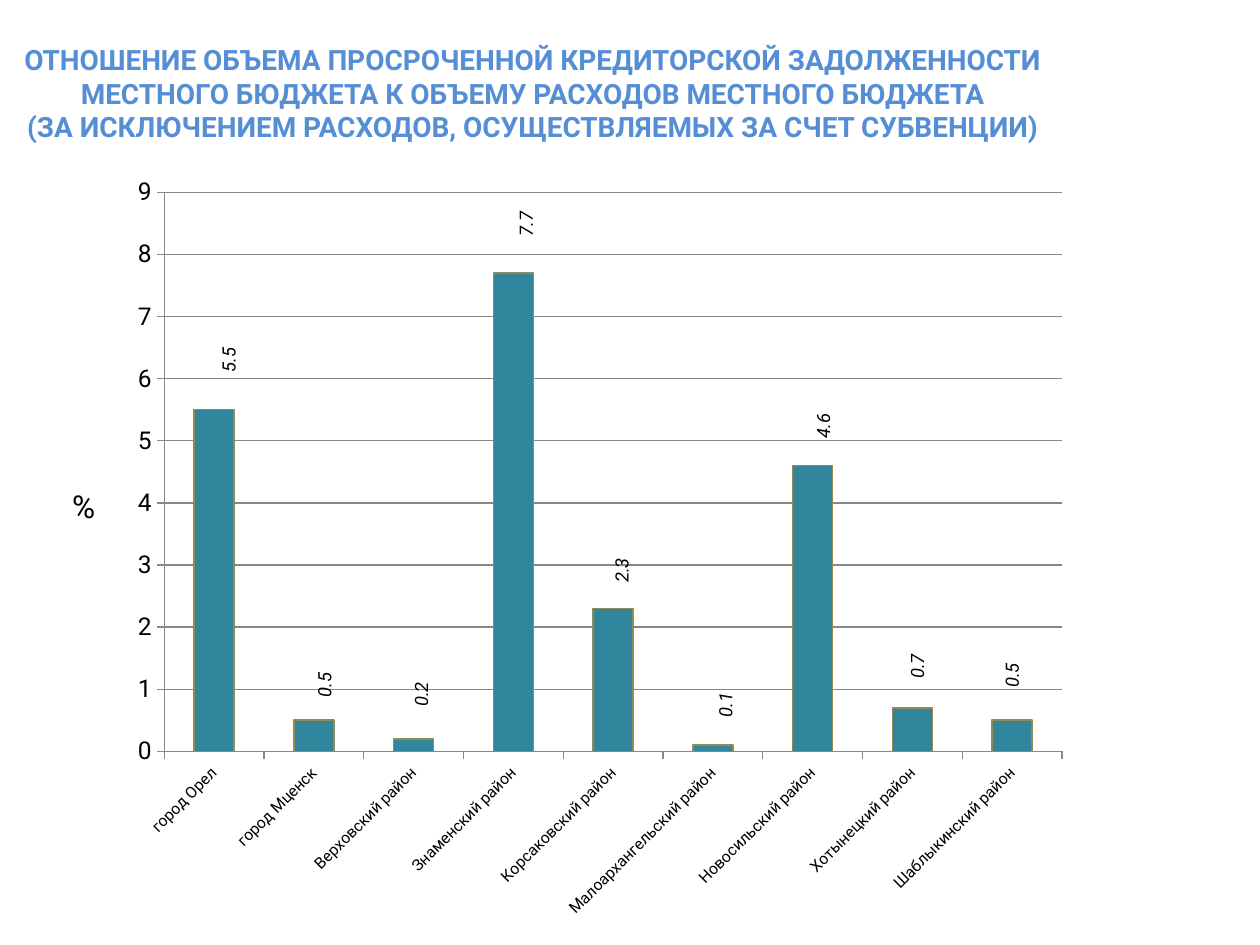
from lxml.etree import SubElement
from pptx import Presentation
from pptx.chart.data import CategoryChartData
from pptx.dml.color import RGBColor
from pptx.enum.chart import XL_CHART_TYPE, XL_LABEL_POSITION, XL_TICK_MARK
from pptx.enum.text import MSO_ANCHOR, PP_ALIGN
from pptx.oxml import parse_xml
from pptx.oxml.ns import nsdecls, qn
from pptx.util import Inches, Pt

FONT = "Roboto"
BLACK = "000000"
GRAY = "878787"
CHART_WIDTH, CHART_HEIGHT = 7.91, 5.91
TITLE = (
    "ОТНОШЕНИЕ ОБЪЕМА ПРОСРОЧЕННОЙ КРЕДИТОРСКОЙ ЗАДОЛЖЕННОСТИ "
    "МЕСТНОГО БЮДЖЕТА К ОБЪЕМУ РАСХОДОВ МЕСТНОГО БЮДЖЕТА\v"
    " (ЗА ИСКЛЮЧЕНИЕМ РАСХОДОВ, ОСУЩЕСТВЛЯЕМЫХ ЗА СЧЕТ СУБВЕНЦИИ) "
)
DISTRICTS = [
    ("город Орел", 5.5, (0.12, -1.75)),
    (" город Мценск", 0.5, (0.09, -0.4)),
    ("Верховский район", 0.2, (0.06, -0.4)),
    ("Знаменский район", 7.7, (0.1, -2.29)),
    ("Корсаковский район", 2.3, (0.07, -0.87)),
    ("Малоархангельский район", 0.1, (0.1, -0.34)),
    ("Новосильский район", 4.6, (0.09, -1.45)),
    ("Хотынецкий район", 0.7, (0.04, -0.5)),
    ("Шаблыкинский район", 0.5, (0, -0.48)),
]


def color(value):
    """Turn a hex string into a colour."""
    return RGBColor.from_string(value)


def style_font(font, size, fill=BLACK, bold=False, italic=False):
    """Set the typeface, size, colour and style of a font."""
    font.name = FONT
    font.size = Pt(size)
    font.color.rgb = color(fill)
    font.bold = bold
    font.italic = italic


def style_line(line, fill, width):
    """Set the colour and width of a line."""
    line.color.rgb = color(fill)
    line.width = Pt(width)


def add_text(slide, box, text, size, fill=BLACK, bold=False, anchor=MSO_ANCHOR.TOP):
    """Add a centred, wrapping text box."""
    shape = slide.shapes.add_textbox(*map(Inches, box))
    text_frame = shape.text_frame
    text_frame.word_wrap = True
    text_frame.vertical_anchor = anchor
    text_frame.text = text
    paragraph = text_frame.paragraphs[0]
    paragraph.alignment = PP_ALIGN.CENTER
    for run in paragraph.runs:
        style_font(run.font, size, fill, bold)


def rotate_text(element, degrees):
    """Rotate the text of a chart element."""
    body = element.find(qn("c:txPr")).find(qn("a:bodyPr"))
    body.set("rot", str(degrees * 60000))
    body.set("vert", "horz")


def make_layout(**settings):
    """Build a manual chart layout from its settings."""
    layout = parse_xml(f"<c:layout {nsdecls('c')}><c:manualLayout/></c:layout>")
    for name, value in settings.items():
        SubElement(layout[0], qn(f"c:{name}")).set("val", str(value))
    return layout


def style_axis(axis, size):
    """Set the text, line and tick marks of an axis."""
    style_font(axis.tick_labels.font, size)
    style_line(axis.format.line, GRAY, 0.75)
    axis.major_tick_mark = XL_TICK_MARK.OUTSIDE
    axis.minor_tick_mark = XL_TICK_MARK.NONE


def add_point_label(point, offset):
    """Add an upright value label moved away from the middle of its bar."""
    label = point.data_label
    style_font(label.font, 10.5, italic=True)
    label.position = XL_LABEL_POSITION.CENTER
    element = label.font._element.getparent().getparent().getparent().getparent()
    rotate_text(element, -90)
    horizontal, vertical = offset
    layout = make_layout(
        x=round(horizontal / CHART_WIDTH, 3), y=round(vertical / CHART_HEIGHT, 3)
    )
    number_format = parse_xml(
        f'<c:numFmt {nsdecls("c")} formatCode="0.0" sourceLinked="0"/>'
    )
    element.find(qn("c:idx")).addnext(layout)
    layout.addnext(number_format)


def hide_leader_lines(series):
    """Turn off the lines that join moved labels to their bars."""
    labels = series.data_labels._element
    for leader_lines in labels.findall(qn("c:showLeaderLines")):
        leader_lines.set("val", "0")


def add_debt_chart(slide):
    """Add the column chart of overdue debt by district."""
    names, values, offsets = zip(*DISTRICTS)
    data = CategoryChartData()
    data.categories = names
    data.add_series("Series 1", values)
    chart = slide.shapes.add_chart(
        XL_CHART_TYPE.COLUMN_STACKED,
        Inches(0.56), Inches(1.39), Inches(CHART_WIDTH), Inches(CHART_HEIGHT), data,
    ).chart
    style_font(chart.font, 18)
    chart.has_legend = False
    chart.has_title = False

    style_axis(chart.category_axis, 9)
    rotate_text(chart.category_axis._element, -45)
    value_axis = chart.value_axis
    style_axis(value_axis, 14)
    value_axis.minimum_scale, value_axis.maximum_scale = 0, 9
    value_axis.major_unit = 1
    value_axis.has_major_gridlines = True
    style_line(value_axis.major_gridlines.format.line, GRAY, 0.75)
    value_axis.tick_labels.number_format = "#,##0"
    value_axis.tick_labels.number_format_is_linked = False

    plot = chart.plots[0]
    plot.gap_width = 150
    plot.overlap = 100
    plot.vary_by_categories = False
    series = plot.series[0]
    series.format.fill.solid()
    series.format.fill.fore_color.rgb = color("31859C")
    style_line(series.format.line, "948A54", 0.9)
    for index, offset in enumerate(offsets):
        add_point_label(series.points[index], offset)
    hide_leader_lines(series)

    plot_area = chart._chartSpace.chart.plotArea
    for layout in plot_area.findall(qn("c:layout")):
        plot_area.remove(layout)
    plot_area.insert(0, make_layout(
        layoutTarget="inner", xMode="edge", yMode="edge",
        x=0.094, y=0.023, w=0.901, h=0.751,
    ))


def main():
    """Build and save the slide."""
    presentation = Presentation()
    presentation.slide_width = Inches(10)
    presentation.slide_height = Inches(7.5)
    slide = presentation.slides.add_slide(presentation.slide_layouts[6])
    add_text(slide, (0, 0.29, 8.46, 0.91), TITLE, 16, "558ED5", bold=True)
    add_debt_chart(slide)
    add_text(slide, (0.43, 3.75, 0.47, 0.53), "%", 18, anchor=MSO_ANCHOR.MIDDLE)
    presentation.save("out.pptx")


if __name__ == "__main__":
    main()
